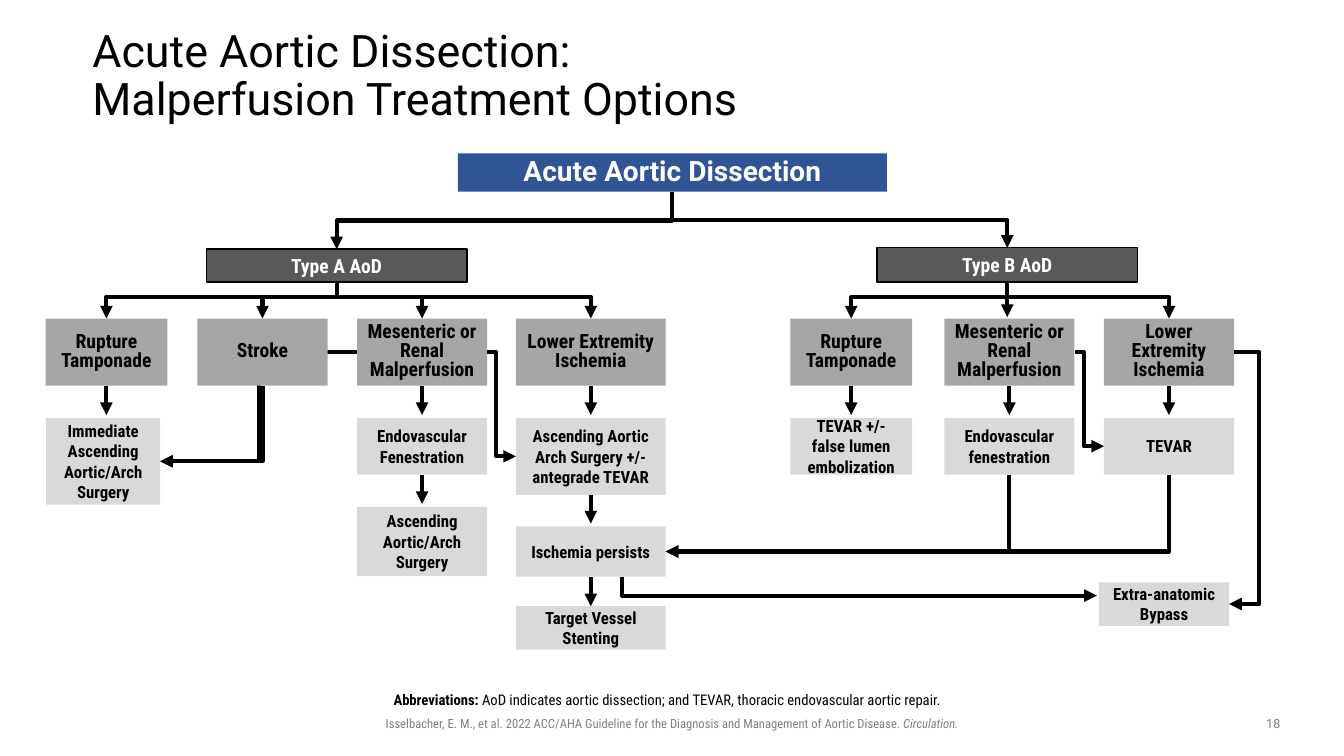
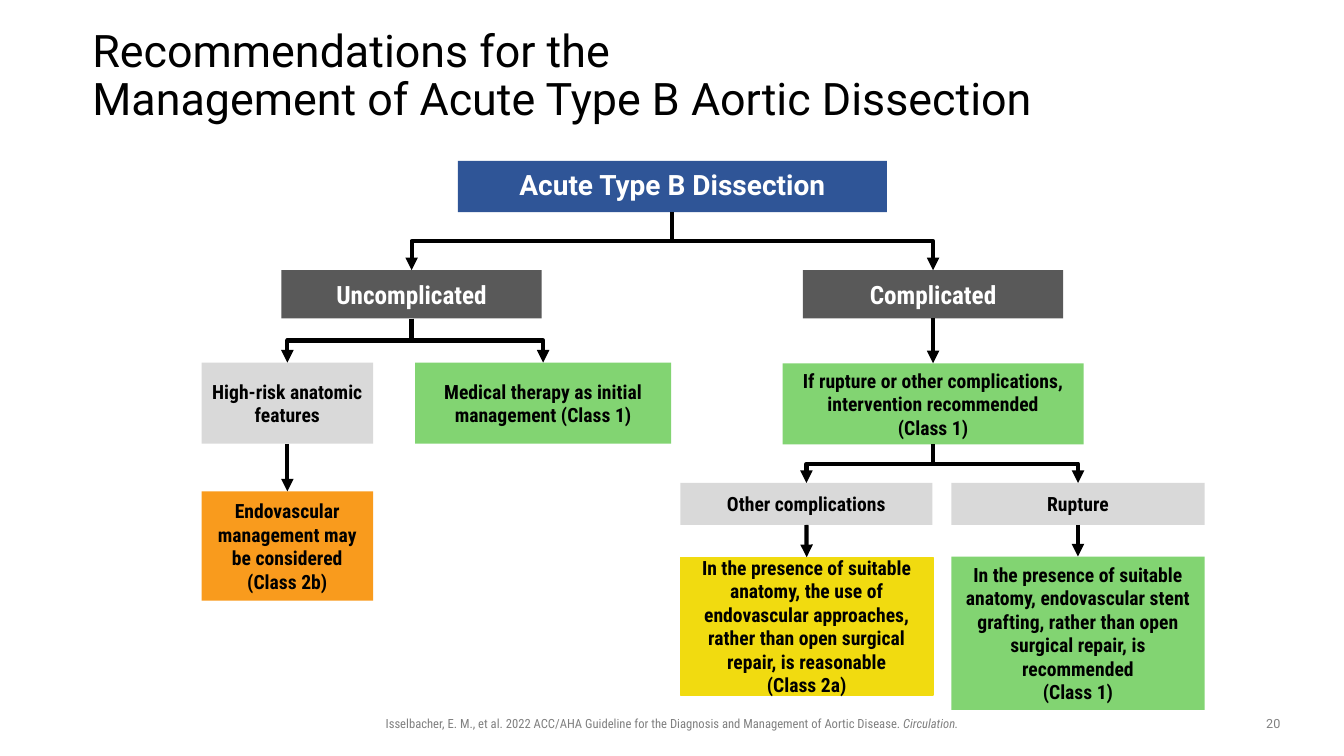
from dataclasses import dataclass

from lxml.etree import SubElement
from pptx import Presentation
from pptx.dml.color import RGBColor
from pptx.enum.shapes import MSO_CONNECTOR, MSO_SHAPE
from pptx.enum.text import MSO_ANCHOR, PP_ALIGN
from pptx.oxml.ns import qn
from pptx.util import Pt

# Shared look
BLACK, WHITE, GRAY = "000000", "FFFFFF", "808080"
BLUE, DARK, MEDIUM, LIGHT = "2F5597", "595959", "A6A6A6", "D9D9D9"
GREEN, YELLOW, ORANGE = "82D472", "F1DB10", "F99B1D"
BODY, HEADING = "Roboto Condensed", "Roboto"
BOTTOM, TOP = 2, 0


@dataclass
class Area:
    left: float
    top: float
    width: float
    height: float

    def inner(self, left, top, width, height):
        return Area(self.left + left, self.top + top, width, height)

    def lengths(self):
        return [Pt(v) for v in (self.left, self.top, self.width, self.height)]


@dataclass
class BoxStyle:
    fill: str
    size: float
    color: str = BLACK
    font: str = BODY
    spacing: float = 1.0
    border: str = ""
    padded: bool = True


ROOT = BoxStyle(BLUE, 20, WHITE, HEADING, 0.9, padded=False)
TYPE = BoxStyle(DARK, 14, WHITE, border=BLACK)
SYMPTOM = BoxStyle(MEDIUM, 14, spacing=0.8)
TREATMENT = BoxStyle(LIGHT, 12)
COURSE = BoxStyle(DARK, 18, WHITE)
FINDING = BoxStyle(LIGHT, 14)
CLASS_1 = BoxStyle(GREEN, 14)
CLASS_2A = BoxStyle(YELLOW, 14, border=YELLOW)
CLASS_2B = BoxStyle(ORANGE, 14)


def rgb(value):
    return RGBColor.from_string(value)


# Text
def add_run(paragraph, text, size, color, font, bold=False, italic=False):
    run = paragraph.add_run()
    run.text = text
    run.font.size, run.font.name = Pt(size), font
    run.font.bold, run.font.italic = bold, italic
    run.font.color.rgb = rgb(color)


def add_lines(paragraph, text, *look, **emphasis):
    for number, line in enumerate(text.split("\n")):
        if number:
            paragraph.add_line_break()
        add_run(paragraph, line, *look, **emphasis)


def set_padding(frame, left, top, right, bottom):
    frame.margin_left, frame.margin_top = Pt(left), Pt(top)
    frame.margin_right, frame.margin_bottom = Pt(right), Pt(bottom)


def add_text(slide, area, align=PP_ALIGN.CENTER):
    frame = slide.shapes.add_textbox(*area.lengths()).text_frame
    frame.word_wrap = True
    frame.paragraphs[0].alignment = align
    return frame


def add_title(slide, area, text):
    frame = add_text(slide, area, PP_ALIGN.LEFT)
    set_padding(frame, 0, 0, 0, 0)
    frame.vertical_anchor = MSO_ANCHOR.MIDDLE
    frame.paragraphs[0].line_spacing = 0.9
    add_lines(frame.paragraphs[0], text, 32, BLACK, HEADING)


def add_footer(slide, area, number):
    citation = add_text(slide, area.inner(0, 0.5, 699, 18)).paragraphs[0]
    add_run(citation, "Isselbacher, E. M., et al. 2022 ACC/AHA Guideline for the "
            "Diagnosis and Management of Aortic Disease. ", 9, GRAY, BODY)
    add_run(citation, "Circulation.", 9, GRAY, BODY, italic=True)
    page = add_text(slide, area.inner(area.width - 30, 0, 30, 18.5)).paragraphs[0]
    add_run(page, number, 9, GRAY, HEADING)


def add_abbreviations(slide, area):
    frame = add_text(slide, area)
    set_padding(frame, 0, 3.6, 7.2, 3.6)
    paragraph = frame.paragraphs[0]
    paragraph.line_spacing = 0.9
    add_run(paragraph, "Abbreviations: ", 10.5, BLACK, BODY, bold=True)
    add_run(paragraph, "AoD indicates aortic dissection; and TEVAR, thoracic "
            "endovascular aortic repair.", 10.5, BLACK, BODY)


# Flow chart boxes
def add_box(slide, area, text, style):
    box = slide.shapes.add_shape(MSO_SHAPE.RECTANGLE, *area.lengths())
    box.shadow.inherit = False
    box.fill.solid()
    box.fill.fore_color.rgb = rgb(style.fill)
    if style.border:
        box.line.color.rgb = rgb(style.border)
        box.line.width = Pt(1)
    else:
        box.line.fill.background()
    frame = box.text_frame
    frame.word_wrap = True
    frame.vertical_anchor = MSO_ANCHOR.MIDDLE
    if not style.padded:
        set_padding(frame, 0, 0, 0, 0)
    paragraph = frame.paragraphs[0]
    paragraph.alignment = PP_ALIGN.CENTER
    paragraph.line_spacing = style.spacing
    add_lines(paragraph, text, style.size, style.color, style.font, bold=True)
    return box


def side(box, across, down):
    """Point of a box, given as fractions of its width and height."""
    return (box.left.pt + across * box.width.pt, box.top.pt + down * box.height.pt)


def bottom(box):
    return side(box, 0.5, 1)


def top(box):
    return side(box, 0.5, 0)


def left(box):
    return side(box, 0, 0.5)


def right(box):
    return side(box, 1, 0.5)


# Arrows
def add_arrow(slide, kind, start, end):
    arrow = slide.shapes.add_connector(kind, *[Pt(v) for v in (*start, *end)])
    arrow.line.color.rgb = rgb(BLACK)
    arrow.line.width = Pt(3)
    properties = arrow._element.spPr
    SubElement(properties.find(qn("a:ln")), qn("a:tailEnd"), type="triangle")
    SubElement(properties, qn("a:effectLst"))
    return arrow


def add_drop(slide, upper, lower, gap=0):
    """Straight arrow down; a gap keeps its head off the lower box."""
    x, y = bottom(upper)
    arrow = add_arrow(slide, MSO_CONNECTOR.STRAIGHT, (x, y), (x, top(lower)[1] - gap))
    arrow.begin_connect(upper, BOTTOM)
    if not gap:
        arrow.end_connect(lower, TOP)


def add_elbow(slide, start, end, bend=0.5, downward=False):
    """Elbow arrow; bend is the share of the way at the turn, None for one corner."""
    (x1, y1), (x2, y2) = start, end
    if downward:
        x, y = (x1 + x2) / 2, (y1 + y2) / 2
        half_width, half_height = abs(y2 - y1) / 2, abs(x2 - x1) / 2
        start, end = (x - half_width, y - half_height), (x + half_width, y + half_height)
    arrow = add_arrow(slide, MSO_CONNECTOR.ELBOW, start, end)
    properties = arrow._element.spPr
    if downward:
        frame = properties.find(qn("a:xfrm"))
        frame.set("rot", str((90 if x2 < x1 else 270) * 60000))
        if x2 >= x1:
            frame.set("flipH", "1")
    shape = properties.find(qn("a:prstGeom"))
    if bend is None:
        shape.set("prst", "bentConnector2")
    else:
        guides = shape.find(qn("a:avLst"))
        if guides is None:
            guides = SubElement(shape, qn("a:avLst"))
        SubElement(guides, qn("a:gd"), name="adj1", fmla=f"val {round(bend * 100000)}")
    return arrow


def add_fork(slide, parent, children, bend=0.5):
    for child in children:
        add_elbow(slide, bottom(parent), top(child), bend, downward=True)


# Slide regions
def add_type_a_branch(slide, area):
    def box(x, y, width, height, text, style=TREATMENT):
        return add_box(slide, area.inner(x, y, width, height), text, style)

    type_a = box(115, 0, 186, 23.5, "Type A AoD", TYPE)
    rupture, stroke, mesenteric, extremity = symptoms = [
        box(x, 49.5, width, 48, text, SYMPTOM) for x, width, text in (
            (0, 87, "Rupture Tamponade"), (108.5, 93, "Stroke"),
            (222.5, 93, "Mesenteric or Renal Malperfusion"),
            (336, 107, "Lower Extremity Ischemia"))]
    immediate = box(0.5, 120.5, 81.5, 62, "Immediate Ascending Aortic/Arch Surgery")
    fenestration = box(222.5, 120.5, 93, 40.5, "Endovascular Fenestration")
    surgery = box(222.5, 184, 93, 49.5, "Ascending Aortic/Arch Surgery")
    antegrade = box(336, 120.5, 107, 55, "Ascending Aortic Arch Surgery +/- antegrade TEVAR")
    persists = box(336, 198, 107, 36, "Ischemia persists")
    stenting = box(336, 255, 107, 31, "Target Vessel Stenting")

    add_fork(slide, type_a, symptoms, 0.41)
    for upper, lower in ((rupture, immediate), (mesenteric, fenestration),
                         (fenestration, surgery), (extremity, antegrade),
                         (antegrade, persists)):
        add_drop(slide, upper, lower, 2)
    add_drop(slide, persists, stenting)
    add_elbow(slide, bottom(stroke), right(immediate), None, downward=True)
    add_elbow(slide, right(mesenteric), left(antegrade), 0.32)
    # This arrow runs behind the stroke box
    behind = add_elbow(slide, left(mesenteric), right(immediate))
    slide.shapes._spTree.insert(2, behind._element)
    return type_a, persists


def add_type_b_branch(slide, area):
    def box(x, y, width, height, text, style=TREATMENT):
        return add_box(slide, area.inner(x, y, width, height), text, style)

    type_b = box(62, 0, 186, 24.5, "Type B AoD", TYPE)
    columns = ((0, 87, "Rupture Tamponade", "TEVAR +/-\nfalse lumen embolization"),
               (110, 93, "Mesenteric or Renal Malperfusion", "Endovascular fenestration"),
               (224, 93, "Lower Extremity Ischemia", "TEVAR"))
    symptoms, treatments = [], []
    for x, width, symptom, treatment in columns:
        symptoms.append(box(x, 50.5, width, 48, symptom, SYMPTOM))
        treatments.append(box(x, 121.5, width, 40.5, treatment))
        add_drop(slide, symptoms[-1], treatments[-1], 2)
    rupture, mesenteric, extremity = symptoms
    bypass = box(220.5, 239, 93, 31, "Extra-anatomic Bypass")

    add_fork(slide, type_b, (rupture, extremity), 0.41)
    add_drop(slide, type_b, mesenteric, 1)
    add_elbow(slide, right(mesenteric), left(treatments[2]), 0.32)
    start, end = right(extremity), right(bypass)
    add_elbow(slide, start, end, 18 / (end[0] - start[0]))
    return type_b, treatments[1:], bypass


def add_malperfusion_chart(slide, area):
    root = add_box(slide, area.inner(294.5, 0, 306.5, 27.5),
                   "Acute Aortic Dissection", ROOT)
    type_a, persists = add_type_a_branch(slide, area.inner(0, 68.5, 443, 286))
    type_b, treatments, bypass = add_type_b_branch(slide, area.inner(532, 67.5, 335, 270))
    add_fork(slide, root, (type_a, type_b))
    for treatment in treatments:
        add_elbow(slide, bottom(treatment), right(persists), None, downward=True)
    x, y = left(bypass)
    add_elbow(slide, side(persists, 0.71, 1), (x - 1.5, y - 6), None, downward=True)


def add_type_b_chart(slide, area):
    def box(x, y, width, height, text, style):
        return add_box(slide, area.inner(x, y, width, height), text, style)

    root = box(183, 0, 306.5, 36.5, "Acute Type B Dissection", ROOT)
    uncomplicated = box(57, 78, 186, 34.5, "Uncomplicated", COURSE)
    complicated = box(429.5, 78, 186, 34.5, "Complicated", COURSE)
    # Uncomplicated
    high_risk = box(0, 144, 122.5, 58, "High-risk anatomic features", FINDING)
    medical = box(152.5, 144, 183, 58, "Medical therapy as initial management (Class 1)", CLASS_1)
    considered = box(0, 236, 122.5, 78,
                     "Endovascular management may be considered\n(Class 2b)", CLASS_2B)
    # Complicated
    intervention = box(415, 144.5, 215, 58, "If rupture or other complications, "
                       "intervention recommended\n(Class 1)", CLASS_1)
    other = box(342, 230, 180, 30, "Other complications", FINDING)
    rupture = box(535.5, 230, 181, 30, "Rupture", FINDING)
    reasonable = box(342, 283, 180.5, 98.5, "In the presence of suitable anatomy, the use of "
                     "endovascular approaches, rather than open surgical repair, "
                     "is reasonable\n(Class 2a)", CLASS_2A)
    recommended = box(535.5, 282.5, 181, 109.5, "In the presence of suitable anatomy, "
                      "endovascular stent grafting, rather than open surgical repair, "
                      "is recommended\n(Class 1)", CLASS_1)

    add_fork(slide, root, (uncomplicated, complicated))
    add_fork(slide, uncomplicated, (high_risk, medical))
    add_fork(slide, intervention, (other, rupture))
    for upper, lower in ((high_risk, considered), (complicated, intervention),
                         (other, reasonable), (rupture, recommended)):
        add_drop(slide, upper, lower)


def add_slide(deck, title, number):
    slide = deck.slides.add_slide(deck.slide_layouts[6])
    add_title(slide, Area(66, 29, 828, 52), title)
    add_footer(slide, Area(130.5, 507.5, 794, 18.5), number)
    return slide


def main():
    deck = Presentation()
    deck.slide_width, deck.slide_height = Pt(960), Pt(540)
    malperfusion = add_slide(
        deck, "Acute Aortic Dissection:\nMalperfusion Treatment Options", "18")
    add_malperfusion_chart(malperfusion, Area(32.5, 109.5, 867, 358))
    add_abbreviations(malperfusion, Area(150.5, 491, 659.5, 18.5))
    management = add_slide(
        deck, "Recommendations for the\nManagement of Acute Type B Aortic Dissection", "20")
    add_type_b_chart(management, Area(144, 115, 717, 392))
    deck.save("out.pptx")


if __name__ == "__main__":
    main()
